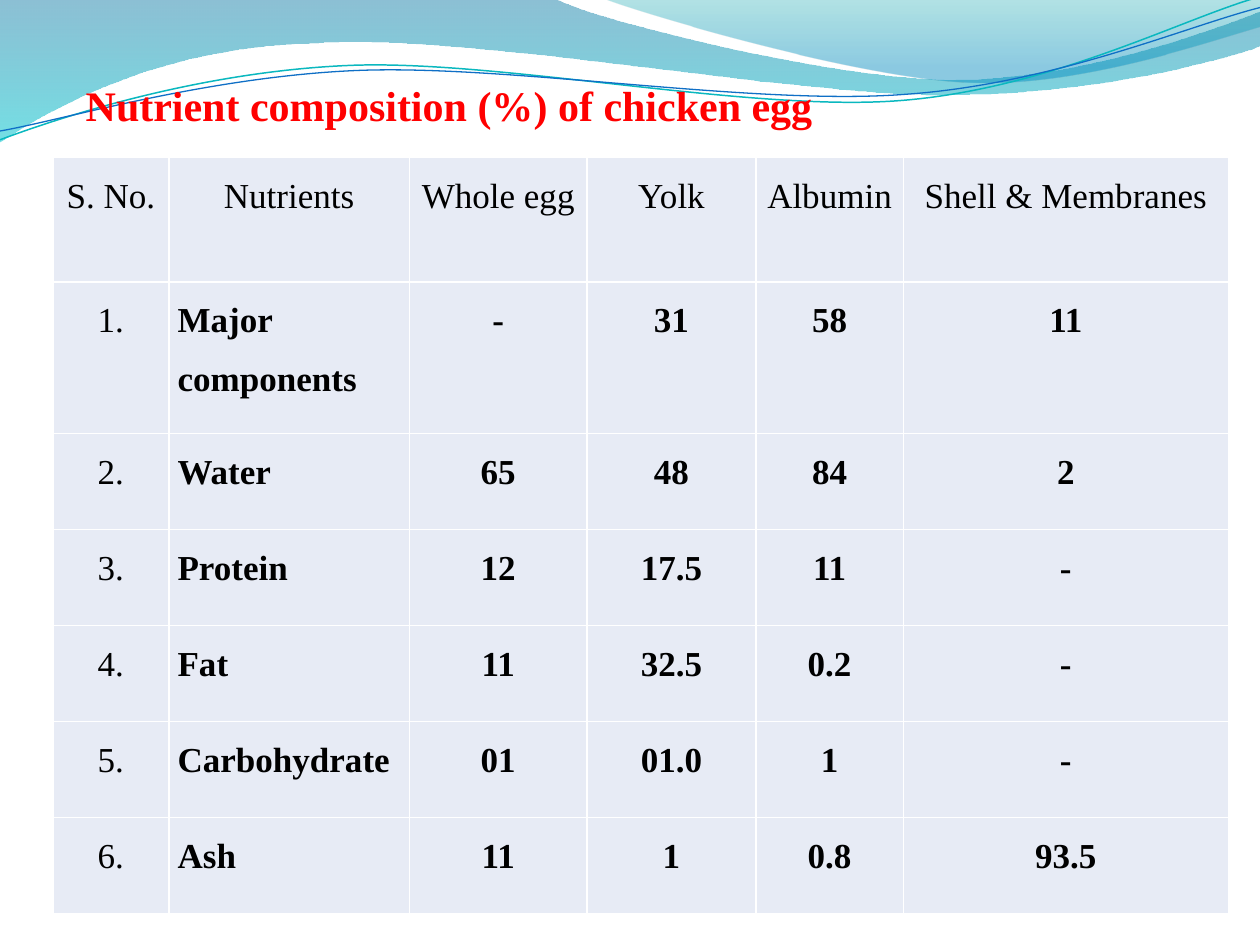
from lxml import etree
from pptx import Presentation
from pptx.dml.color import RGBColor
from pptx.enum import text
from pptx.oxml.ns import qn
from pptx.util import Inches, Pt

FONT = "Times New Roman"
COLUMNS = [0.92, 1.91, 1.41, 1.34, 1.17, 2.58]
TABLE_HEIGHT = 6
TALL_ROWS = [0.99, 1.2]
ROWS = [
    ["S. No.", "Nutrients", "Whole egg", "Yolk", "Albumin", "Shell & Membranes"],
    ["1.", "Major components", "-", "31", "58", "11"],
    ["2.", "Water", "65", "48", "84", "2"],
    ["3.", "Protein", "12", "17.5", "11", "-"],
    ["4.", "Fat", "11", "32.5", "0.2", "-"],
    ["5.", "Carbohydrate", "01", "01.0", "1", "-"],
    ["6.", "Ash", "11", "1", "0.8", "93.5"],
]
LEFT_WAVE = [
    [(0, 0)],
    [(4.4, -0.01)],
    [(4.76, 0.17), (6.64, 0.63), (7.58, 0.63)],
    [(8.53, 0.63), (9.58, 0.26), (10, 0.09)],
    [(10.01, 0.36)],
    [(9.83, 0.44), (8.7, 0.76), (7.46, 0.75)],
    [(6.22, 0.75), (3.82, 0.28), (2.57, 0.34)],
    [(1.29, 0.36), (0.46, 0.83), (-0.01, 1.13)],
]
RIGHT_WAVE = [
    [(4.79, -0.01)],
    [(5.09, 0.11), (6.82, 0.62), (7.69, 0.65)],
    [(8.56, 0.69), (9.61, 0.32), (10, 0.21)],
    [(10, 0)],
]
TEAL_LINE = [
    [(0, 1.11)],
    [(0.48, 0.93), (1.58, 0.57), (2.77, 0.52)],
    [(3.95, 0.47), (5.93, 0.89), (7.13, 0.8)],
    [(8.33, 0.71), (9.38, 0.15), (9.98, -0.02)],
]
BLUE_LINE = [
    [(0, 1.04)],
    [(0.47, 0.96), (1.64, 0.61), (2.83, 0.56)],
    [(4.03, 0.51), (5.97, 0.84), (7.17, 0.75)],
    [(8.36, 0.67), (9.41, 0.21), (10, 0.06)],
]


def rgb(value):
    return RGBColor.from_string(value)


def bend(sp, segments):
    lines = list(sp._element.iter(qn("a:lnTo")))
    for line, segment in zip(lines, segments[1:]):
        if len(segment) == 3:
            line.tag = qn("a:cubicBezTo")
            for i, (x, y) in enumerate(segment[:2]):
                line.insert(i, etree.Element(qn("a:pt"), x=str(Inches(x) - sp.left),
                                             y=str(Inches(y) - sp.top)))


def add_curve(s, segments, close):
    points = [(Inches(x), Inches(y)) for x, y in (segment[-1] for segment in segments)]
    builder = s.shapes.build_freeform(*points[0])
    builder.add_line_segments(points[1:], close=close)
    sp = builder.convert_to_shape()
    sp.shadow.inherit = False
    bend(sp, segments)
    return sp


def add_wave(s, segments, stops):
    sp = add_curve(s, segments, True)
    sp.line.fill.background()
    sp.fill.gradient()
    sp.fill.gradient_angle = 270
    for stop, (position, color, opacity) in zip(sp.fill.gradient_stops, stops):
        stop.position = position
        stop.color.rgb = rgb(color)
    colors = sp._element.spPr.iter(qn("a:srgbClr"))
    for node, (position, color, opacity) in zip(colors, stops):
        etree.SubElement(node, qn("a:alpha")).set("val", str(opacity * 1000))
    return sp


def add_wave_line(s, segments, color, width):
    sp = add_curve(s, segments, False)
    sp.fill.background()
    sp.line.color.rgb = rgb(color)
    sp.line.width = Pt(width)
    return sp


def move_to_master(prs, decorations):
    tree = prs.slide_master.shapes._spTree
    for i, sp in enumerate(decorations):
        sp._element.nvSpPr.cNvPr.set("id", str(101 + i))
        tree.insert(2 + i, sp._element)


def style(p, size, color, bold, align):
    p.alignment = align
    p.font.name = FONT
    p.font.size = Pt(size)
    p.font.bold = bold
    p.font.color.rgb = rgb(color)


def set_title(s, words):
    title = s.shapes.title
    title.left, title.top = Inches(0.58), Inches(0.58)
    title.width, title.height = Inches(9), Inches(6.5)
    tf = title.text_frame
    tf.text = words
    tf.vertical_anchor = text.MSO_ANCHOR.TOP
    p = tf.paragraphs[0]
    style(p, 24, "FF0000", True, text.PP_ALIGN.JUSTIFY)
    p.space_before = Pt(3)


def set_borders(cell, color, width):
    tcPr = cell._tc.get_or_add_tcPr()
    for i, side in enumerate(("a:lnL", "a:lnR", "a:lnT", "a:lnB")):
        ln = etree.Element(qn(side), w=str(Pt(width)))
        fill = etree.SubElement(ln, qn("a:solidFill"))
        etree.SubElement(fill, qn("a:srgbClr"), val=color)
        tcPr.insert(i, ln)


def fill_cell(cell, words, bold, align):
    cell.margin_left = cell.margin_right = Inches(0.07)
    cell.margin_top = cell.margin_bottom = 0
    cell.fill.solid()
    cell.fill.fore_color.rgb = rgb("E7EBF5")
    set_borders(cell, "FFFFFF", 1)
    cell.text = words
    p = cell.text_frame.paragraphs[0]
    style(p, 20, "000000", bold, align)
    p.line_spacing = 1.5


def add_nutrient_table(s):
    short_rows = len(ROWS) - len(TALL_ROWS)
    short = (TABLE_HEIGHT - sum(TALL_ROWS)) / short_rows
    heights = TALL_ROWS + [short] * short_rows
    table = s.shapes.add_table(len(ROWS), len(COLUMNS), Inches(0.42), Inches(1.25),
                               Inches(sum(COLUMNS)), Inches(TABLE_HEIGHT)).table
    for column, width in zip(table.columns, COLUMNS):
        column.width = Inches(width)
    for r, (row, height) in enumerate(zip(ROWS, heights)):
        table.rows[r].height = Inches(height)
        for c, words in enumerate(row):
            is_name = r > 0 and c == 1
            align = text.PP_ALIGN.LEFT if is_name else text.PP_ALIGN.CENTER
            fill_cell(table.cell(r, c), words, r > 0 and c > 0, align)


def main():
    prs = Presentation()
    prs.slide_width, prs.slide_height = Inches(10), Inches(7.5)
    s = prs.slides.add_slide(prs.slide_layouts[5])
    move_to_master(prs, [
        add_wave(s, LEFT_WAVE, [(0, "0074A1", 45), (1, "00C6CF", 55)]),
        add_wave(s, RIGHT_WAVE, [(0, "00A1A9", 30), (0.8, "008BBF", 45)]),
        add_wave_line(s, TEAL_LINE, "0AB8BF", 0.85),
        add_wave_line(s, BLUE_LINE, "0F6FC6", 0.75),
    ])
    set_title(s, "Nutrient composition (%) of chicken egg")
    add_nutrient_table(s)
    prs.save("out.pptx")


if __name__ == "__main__":
    main()
